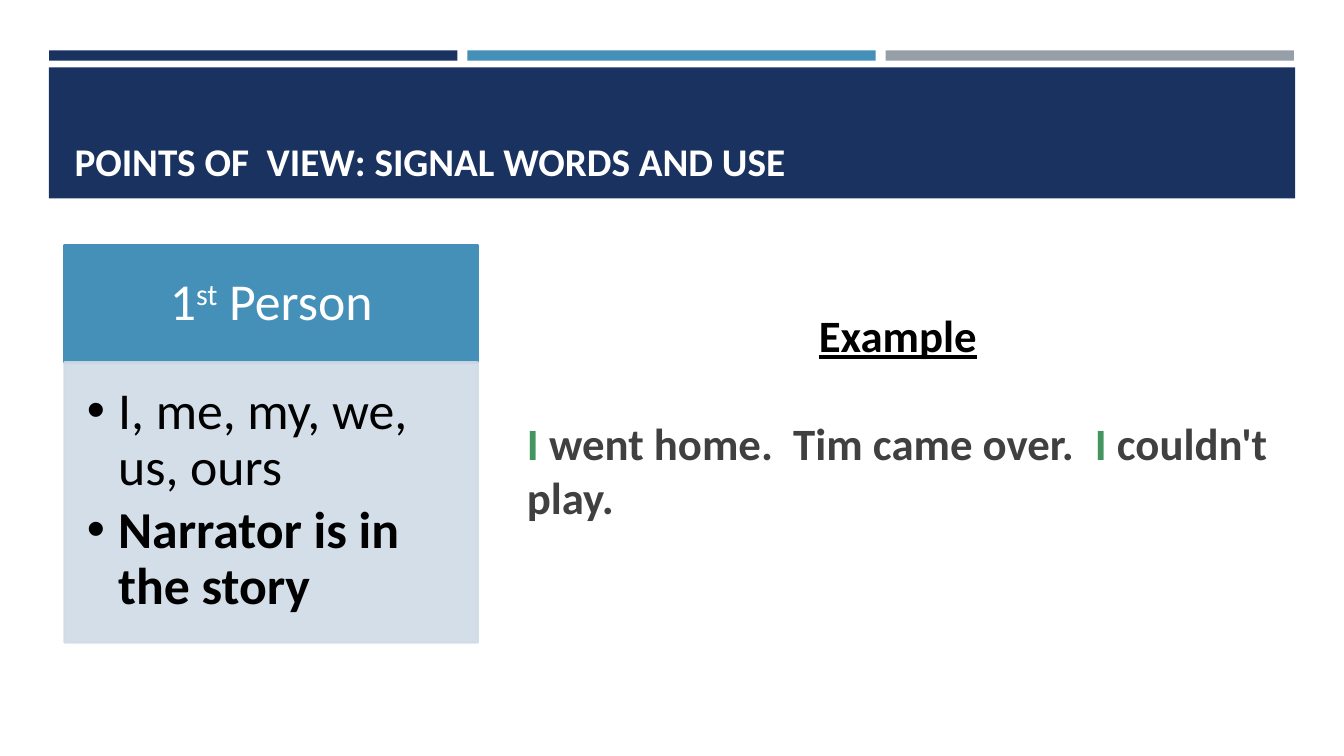
from lxml.etree import SubElement
from pptx import Presentation
from pptx.dml.color import RGBColor
from pptx.enum.shapes import MSO_SHAPE as Shape
from pptx.enum.text import MSO_ANCHOR as Anchor, PP_ALIGN as Align
from pptx.oxml.ns import qn
from pptx.util import Cm, Pt

NAVY, BLUE, GREY, PALE = "1A3260", "4590B8", "969FA7", "CFDBE6"
WHITE, BLACK, DARK, GREEN = "FFFFFF", "000000", "404040", "42955F"


def rgb(value):
    return RGBColor.from_string(value)


def set_opacity(fill_format, percent):
    color = fill_format._xPr.find(qn("a:solidFill"))[0]
    SubElement(color, qn("a:alpha"), val=str(percent * 1000))


class SlideBuilder:
    font = "Calibri"
    default_insets = (0.25, 0.13, 0.25, 0.13)

    def __init__(self, slide):
        self.slide = slide

    def rectangle(self, box, color, outlined=False, opacity=100):
        shape = self.slide.shapes.add_shape(Shape.RECTANGLE, *map(Cm, box))
        shape.shadow.inherit = False
        shape.fill.solid()
        shape.fill.fore_color.rgb = rgb(color)
        if outlined:
            shape.line.width = Pt(1.75)
            shape.line.color.rgb = rgb(color)
        else:
            shape.line.fill.background()
        if opacity < 100:
            set_opacity(shape.fill, opacity)
            set_opacity(shape.line.fill, opacity)
        return shape

    def text_box(self, box):
        return self.slide.shapes.add_textbox(*map(Cm, box))

    def fill_text(self, shape, paragraphs, size, anchor=Anchor.TOP, insets=default_insets):
        """Fill a shape; each paragraph is a list of (text, color, font options)."""
        frame = shape.text_frame
        frame.word_wrap = True
        frame.vertical_anchor = anchor
        (frame.margin_left, frame.margin_top,
         frame.margin_right, frame.margin_bottom) = map(Cm, insets)
        frame.text = "\n".join([""] * len(paragraphs))
        for paragraph, pieces in zip(frame.paragraphs, paragraphs):
            paragraph.alignment = Align.LEFT
            for text, color, options in pieces:
                run = paragraph.add_run()
                run.text = text
                run.font.name = self.font
                run.font.size = Pt(size)
                run.font.color.rgb = rgb(color)
                run.font.bold = options.get("bold", False)
                run.font.underline = options.get("underline", False)
        return frame.paragraphs

    def superscript(self, run, percent):
        run.font._element.set("baseline", str(percent * 1000))

    def bullet(self, paragraph, indent):
        properties = paragraph._p.get_or_add_pPr()
        properties.set("marL", str(Cm(indent)))
        properties.set("indent", str(-Cm(indent)))
        SubElement(properties, qn("a:buFont"), typeface="Arial")
        SubElement(properties, qn("a:buChar"), char="•")


def main():
    presentation = Presentation()
    presentation.slide_width, presentation.slide_height = Cm(33.87), Cm(19.05)
    builder = SlideBuilder(presentation.slides.add_slide(presentation.slide_layouts[6]))
    bold = {"bold": True}

    for index, color in enumerate((NAVY, BLUE, GREY)):
        builder.rectangle((1.24 + index * 10.54, 1.27, 10.29, 0.26), color)
    builder.rectangle((1.23, 1.7, 31.41, 3.3), NAVY)
    title = builder.text_box((1.63, 1.96, 30.63, 2.82))
    builder.fill_text(title, [[("POINTS OF  VIEW: SIGNAL WORDS AND USE", WHITE, bold)]],
                      28, Anchor.BOTTOM)

    header = builder.rectangle((1.63, 6.17, 10.41, 2.97), BLUE, outlined=True)
    person, = builder.fill_text(
        header, [[("1", WHITE, {}), ("st", WHITE, {}), (" Person", WHITE, {})]],
        37, Anchor.MIDDLE, (0.74, 0.41, 0.74, 0.41))
    person.alignment = Align.CENTER
    person.line_spacing = 0.9
    builder.superscript(person.runs[1], 30)

    body = builder.rectangle((1.63, 9.13, 10.41, 7.06), PALE, outlined=True, opacity=90)
    signals = builder.fill_text(
        body, [[("I, me, my, we, us, ours", BLACK, {})],
               [("Narrator is in the story", BLACK, bold)]],
        37, insets=(0.56, 0.56, 0.74, 0.81))
    for paragraph in signals:
        paragraph.line_spacing = 0.9
        paragraph.space_after = Pt(5.5)
        builder.bullet(paragraph, 0.79)

    example = builder.text_box((13.03, 7.62, 19.2, 7.09))
    heading, _ = builder.fill_text(
        example, [[("Example", BLACK, {"bold": True, "underline": True})],
                  [("I ", GREEN, bold), ("went home.  Tim came over.  ", DARK, bold),
                   ("I ", GREEN, bold), ("couldn't play.", DARK, bold)]], 32)
    heading.alignment = Align.CENTER
    heading.space_after = Pt(39)

    presentation.save("out.pptx")


if __name__ == "__main__":
    main()
